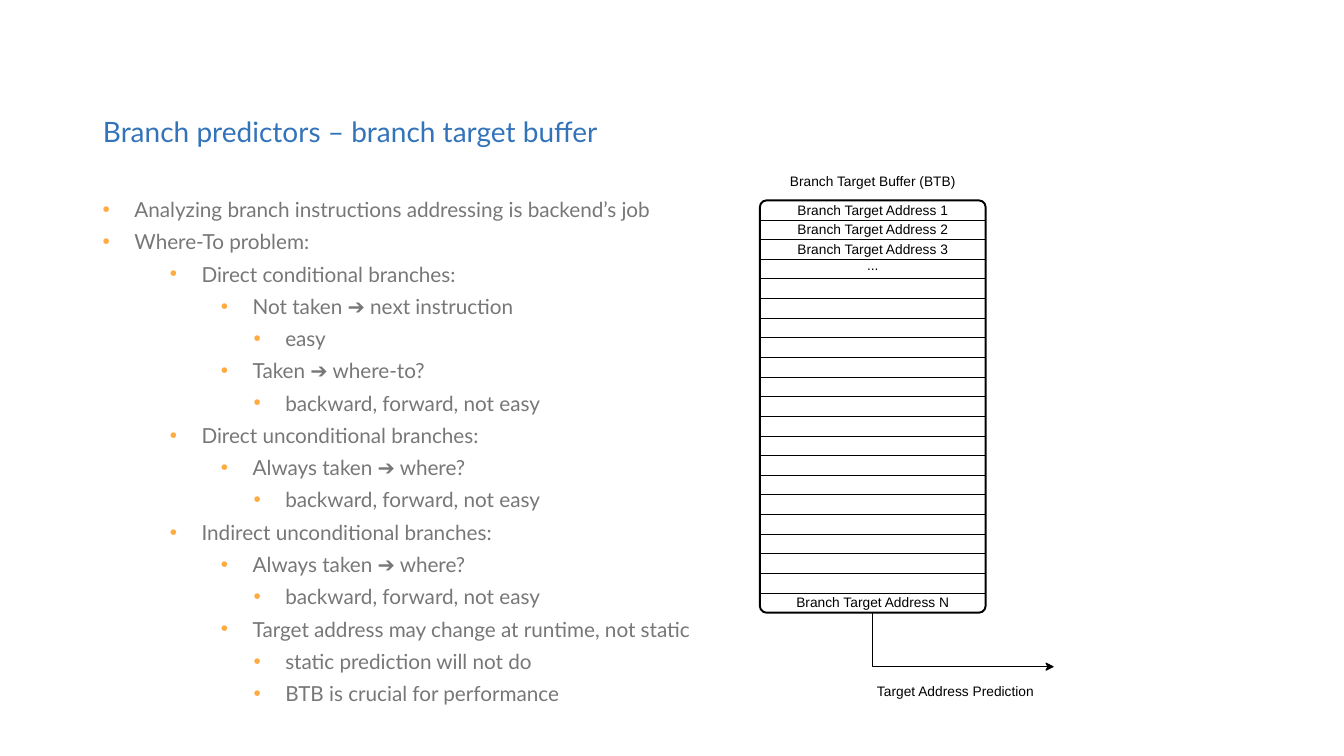
from lxml.etree import SubElement
from pptx import Presentation
from pptx.dml.color import RGBColor
from pptx.enum.shapes import MSO_CONNECTOR, MSO_SHAPE
from pptx.enum.text import MSO_ANCHOR, MSO_AUTO_SIZE, PP_ALIGN
from pptx.oxml.ns import qn
from pptx.util import Cm, Pt

HEADING = "Branch predictors – branch target buffer"
OUTLINE = [
    (0, "Analyzing branch instructions addressing is backend’s job"),
    (0, "Where-To problem:"),
    (1, "Direct conditional branches:"),
    (2, "Not taken ➔ next instruction"),
    (3, "easy"),
    (2, "Taken ➔ where-to?"),
    (3, "backward, forward, not easy"),
    (1, "Direct unconditional branches:"),
    (2, "Always taken ➔ where?"),
    (3, "backward, forward, not easy"),
    (1, "Indirect unconditional branches:"),
    (2, "Always taken ➔ where?"),
    (3, "backward, forward, not easy"),
    (2, "Target address may change at runtime, not static"),
    (3, "static prediction will not do"),
    (3, "BTB is crucial for performance"),
]
LEVEL_INDENTS = [0.8, 2.49, 3.78, 4.6]
HANGING = 0.8

BUFFER_LEFT, BUFFER_TOP, BUFFER_WIDTH, BUFFER_HEIGHT = 19.15, 5.05, 5.69, 10.39
BUFFER_MIDDLE = BUFFER_LEFT + BUFFER_WIDTH / 2
BUFFER_BOTTOM = BUFFER_TOP + BUFFER_HEIGHT
ENTRY_COUNT = 21
ENTRY_HEIGHT = BUFFER_HEIGHT / ENTRY_COUNT
ENTRIES = {
    0: "Branch Target Address 1",
    1: "Branch Target Address 2",
    2: "Branch Target Address 3",
    2.83: "...",
    ENTRY_COUNT - 1: "Branch Target Address N",
}
LABEL_RISE = 0.1
ARROW_Y, ARROW_TIP = 16.8, 26.54


def color(hex_value):
    return RGBColor.from_string(hex_value)


class SlideBuilder:
    """Holds the text and line styles and draws onto the current slide."""

    title_style = {"name": "Lato", "size": Pt(20), "color": "3373BA"}
    body_style = {"name": "Lato", "size": Pt(14.8), "color": "777777"}
    label_style = {"name": "Arial", "size": Pt(9.8), "color": "000000"}
    bullet_color = "FFAB40"
    ink = "000000"
    thin, thick = Pt(0.7), Pt(1.4)

    def __init__(self, deck):
        self.slide = deck.slides.add_slide(deck.slide_layouts[5])

    def styled_run(self, paragraph, text, style):
        run = paragraph.add_run()
        run.text = text
        for attribute, value in style.items():
            if attribute == "color":
                run.font.color.rgb = color(value)
            else:
                setattr(run.font, attribute, value)

    def outline(self, shape, width, fill=None):
        shape.shadow.inherit = False
        if fill:
            shape.fill.solid()
            shape.fill.fore_color.rgb = color(fill)
        else:
            shape.fill.background()
        shape.line.color.rgb = color(self.ink)
        shape.line.width = width

    def title(self, text, left, top, width, height):
        heading = self.slide.shapes.title
        box = {"left": left, "top": top, "width": width, "height": height}
        for attribute, value in box.items():
            setattr(heading, attribute, Cm(value))
        frame = heading.text_frame
        frame.auto_size = MSO_AUTO_SIZE.NONE
        frame.vertical_anchor = MSO_ANCHOR.MIDDLE
        frame.paragraphs[0].alignment = PP_ALIGN.LEFT
        self.styled_run(frame.paragraphs[0], text, self.title_style)

    def bullets(self, items, left, top, width, height):
        frame = self.slide.shapes.add_textbox(
            Cm(left), Cm(top), Cm(width), Cm(height)).text_frame
        frame.word_wrap = True
        for position, (level, text) in enumerate(items):
            paragraph = frame.add_paragraph() if position else frame.paragraphs[0]
            properties = paragraph._p.get_or_add_pPr()
            properties.set("marL", str(Cm(LEVEL_INDENTS[level])))
            properties.set("indent", str(-Cm(HANGING)))
            tint = SubElement(properties, qn("a:buClr"))
            SubElement(tint, qn("a:srgbClr"), val=self.bullet_color)
            SubElement(properties, qn("a:buFont"), typeface="Arial")
            SubElement(properties, qn("a:buChar"), char="•")
            paragraph.level = level
            paragraph.line_spacing = 1.3
            self.styled_run(paragraph, text, self.body_style)

    def label(self, text, middle, top):
        frame = self.slide.shapes.add_textbox(
            Cm(middle - BUFFER_WIDTH / 2), Cm(top), Cm(BUFFER_WIDTH), Cm(0.66)).text_frame
        frame.word_wrap = True
        frame.paragraphs[0].alignment = PP_ALIGN.CENTER
        self.styled_run(frame.paragraphs[0], text, self.label_style)

    def rounded_frame(self, left, top, width, height):
        frame = self.slide.shapes.add_shape(
            MSO_SHAPE.ROUNDED_RECTANGLE, Cm(left), Cm(top), Cm(width), Cm(height))
        frame.adjustments[0] = 0.03
        self.outline(frame, self.thick)

    def rule(self, left, right, y):
        divider = self.slide.shapes.add_connector(
            MSO_CONNECTOR.STRAIGHT, Cm(left), Cm(y), Cm(right), Cm(y))
        divider.line.color.rgb = color(self.ink)
        divider.line.width = self.thin
        SubElement(divider._element.spPr, qn("a:effectLst"))

    def trace(self, points, fill=None):
        start, *rest = [(Cm(x), Cm(y)) for x, y in points]
        builder = self.slide.shapes.build_freeform(*start)
        builder.add_line_segments(rest, close=bool(fill))
        self.outline(builder.convert_to_shape(), self.thin, fill)


def main():
    deck = Presentation()
    deck.slide_width, deck.slide_height = Cm(33.87), Cm(19.05)
    page = SlideBuilder(deck)
    page.bullets(OUTLINE, 2.34, 4.65, 29.21, 14.1)
    page.title(HEADING, 2.34, 2.69, 29.21, 1.22)

    page.rounded_frame(BUFFER_LEFT, BUFFER_TOP, BUFFER_WIDTH, BUFFER_HEIGHT)
    for row in range(1, ENTRY_COUNT):
        page.rule(BUFFER_LEFT, BUFFER_LEFT + BUFFER_WIDTH, BUFFER_TOP + row * ENTRY_HEIGHT)
    for row, address in ENTRIES.items():
        page.label(address, BUFFER_MIDDLE, BUFFER_TOP + row * ENTRY_HEIGHT - LABEL_RISE)
    page.label("Branch Target Buffer (BTB)", BUFFER_MIDDLE, 4.22)
    page.label("Target Address Prediction", 24.08, 17.07)

    notch = ARROW_TIP - 0.13
    page.trace([(BUFFER_MIDDLE, BUFFER_BOTTOM), (BUFFER_MIDDLE, ARROW_Y), (notch, ARROW_Y)])
    page.trace(
        [(ARROW_TIP, ARROW_Y), (ARROW_TIP - 0.18, ARROW_Y + 0.09),
         (notch, ARROW_Y), (ARROW_TIP - 0.18, ARROW_Y - 0.09)], page.ink)
    deck.save("out.pptx")


if __name__ == "__main__":
    main()
